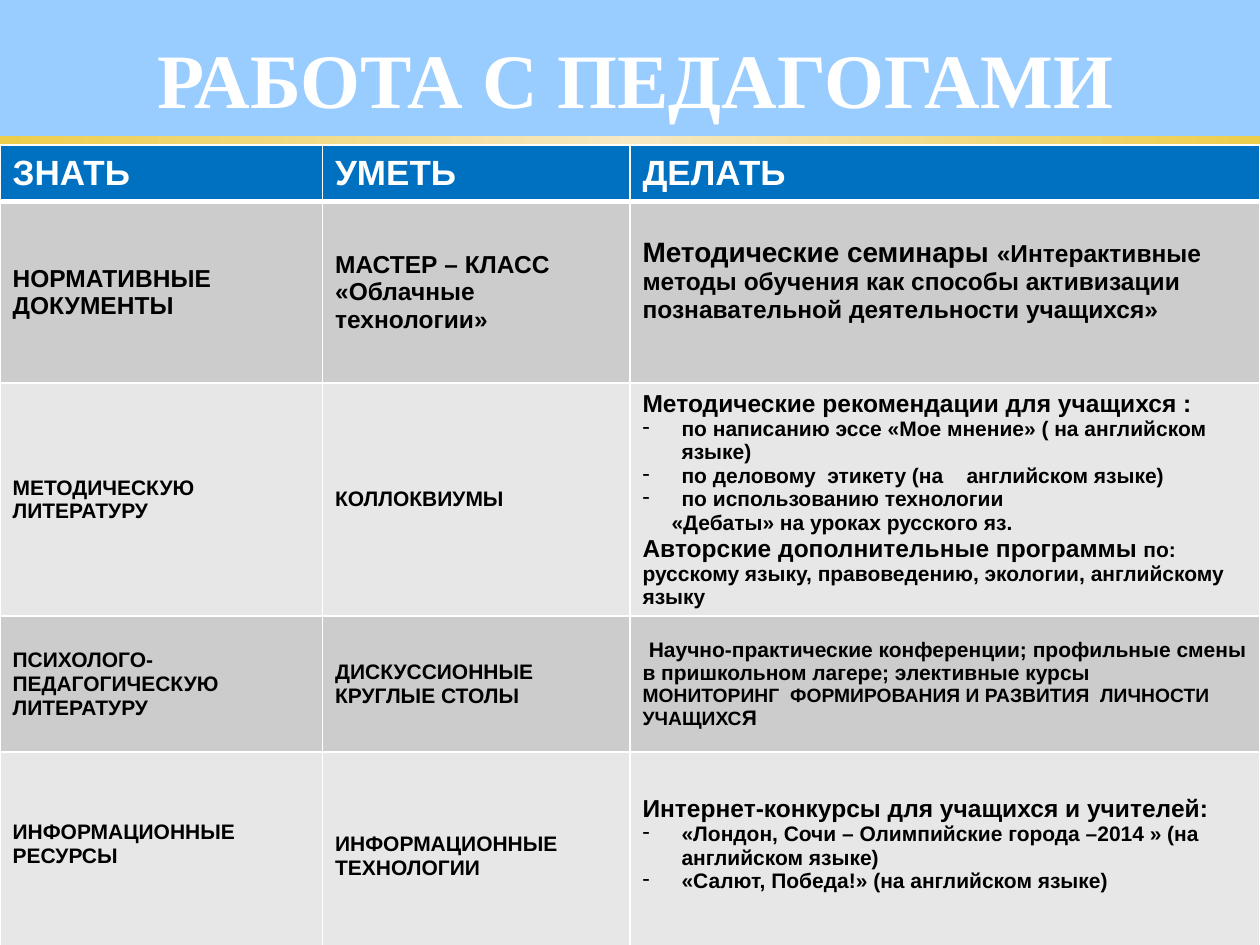
import copy

import pptx
import pptx.dml.color
import pptx.enum.shapes
import pptx.enum.text
import pptx.oxml
import pptx.oxml.ns
import pptx.util

Inches = pptx.util.Inches
Pt = pptx.util.Pt

TABLE_TOP = 1.15
COLUMN_WIDTHS = [2.56, 2.44, 5]
ROW_HEIGHTS = [0.45, 1.44, 1.85, 1.08, 1.65]
ROW_FILLS = ["0070C0", "CCCCCC", "E7E7E7", "CCCCCC", "E7E7E7"]
HANGING = 0.31


def line(*runs, left=0, first=0, bullet=None):
    """One paragraph: (text, size) runs with its indents in inches."""
    return {"runs": runs, "left": left, "first": first, "bullet": bullet}


def dash(text):
    return line((text, 12), left=HANGING, first=-HANGING, bullet="-")


HEADER = [[line((text, 20))] for text in ("ЗНАТЬ", "УМЕТЬ", "ДЕЛАТЬ")]
BODY = [
    [
        [line(("НОРМАТИВНЫЕ ДОКУМЕНТЫ", 14))],
        [line(("МАСТЕР – КЛАСС «Облачные технологии»", 14))],
        [line(("Методические семинары ", 16),
              ("«Интерактивные методы обучения как способы активизации "
               "познавательной деятельности учащихся»", 14))],
    ],
    [
        [line(("МЕТОДИЧЕСКУЮ ЛИТЕРАТУРУ", 12))],
        [line(("КОЛЛОКВИУМЫ", 12))],
        [line(("Методические рекомендации для учащихся :", 14)),
         dash("по написанию эссе «Мое мнение» ( на английском языке)"),
         dash("по деловому  этикету (на    английском языке)"),
         dash("по использованию технологии"),
         line(("«Дебаты» на уроках русского яз.", 12), left=0.23),
         line(("Авторские дополнительные программы", 14),
              (" по: русскому языку, правоведению, экологии, английскому языку", 12))],
    ],
    [
        [line(("ПСИХОЛОГО-ПЕДАГОГИЧЕСКУЮ ЛИТЕРАТУРУ", 12))],
        [line(("ДИСКУССИОННЫЕ КРУГЛЫЕ СТОЛЫ", 12))],
        [line(("Научно-практические конференции; профильные смены "
               "в пришкольном лагере; элективные курсы", 12), first=0.05),
         line(("МОНИТОРИНГ  ФОРМИРОВАНИЯ И РАЗВИТИЯ  ЛИЧНОСТИ УЧАЩИХС", 11),
              ("Я", 12))],
    ],
    [
        [line(("ИНФОРМАЦИОННЫЕ", 12)), line(("РЕСУРСЫ", 12))],
        [line(("ИНФОРМАЦИОННЫЕ ТЕХНОЛОГИИ", 12))],
        [line(("Интернет-конкурсы для учащихся и учителей:", 14)),
         dash("«Лондон, Сочи – Олимпийские города –2014 » (на английском языке)"),
         dash("«Салют, Победа!» (на английском языке)")],
    ],
]
# Cells (row, column) whose text sits a little above the middle
RAISED_CELLS = {(1, 2), (4, 0), (4, 2)}


def color(value):
    return pptx.dml.color.RGBColor.from_string(value)


def style_font(font, name, size, value):
    font.name = name
    font.size = Pt(size)
    font.bold = True
    font.color.rgb = color(value)


def add_title(slide, text):
    box = slide.shapes.add_textbox(Inches(0.42), Inches(0.33), Inches(9.25), Inches(0.58))
    frame = box.text_frame
    frame.word_wrap = True
    frame.vertical_anchor = pptx.enum.text.MSO_ANCHOR.MIDDLE
    frame.text = text
    paragraph = frame.paragraphs[0]
    paragraph.alignment = pptx.enum.text.PP_ALIGN.CENTER
    style_font(paragraph.runs[0].font, "Times New Roman", 44, "FFFFFF")


def add_gold_band(slide):
    band = slide.shapes.add_shape(
        pptx.enum.shapes.MSO_SHAPE.RECTANGLE, 0, Inches(1.08), Inches(10), Inches(0.13))
    band.shadow.inherit = False
    band.line.fill.background()
    band.fill.gradient()
    band.fill.gradient_angle = 0
    stop_list = band.fill._fill._gradFill.gsLst
    stop_list.append(copy.deepcopy(stop_list[0]))
    stops = zip(band.fill.gradient_stops, (0, 0.5, 1), ("ECCE4C", "F6E9C4", "ECCE4C"))
    for stop, position, value in stops:
        stop.position = position
        stop.color.rgb = color(value)


def set_border(cell, side, points):
    border = pptx.oxml.parse_xml(
        f'<a:ln{side} {pptx.oxml.ns.nsdecls("a")} w="{Pt(points)}">'
        '<a:solidFill><a:srgbClr val="FFFFFF"/></a:solidFill>'
        f'</a:ln{side}>')
    cell._tc.get_or_add_tcPr().append(border)


def write_paragraph(paragraph, content, value):
    properties = paragraph._p.get_or_add_pPr()
    properties.set("marL", str(Inches(content["left"])))
    properties.set("indent", str(Inches(content["first"])))
    if content["bullet"]:
        properties.append(pptx.oxml.parse_xml(
            f'<a:buChar {pptx.oxml.ns.nsdecls("a")} char="{content["bullet"]}"/>'))
    for text, size in content["runs"]:
        run = paragraph.add_run()
        run.text = text
        style_font(run.font, "Arial", size, value)


def fill_cell(cell, paragraphs, fill, text_color, top_border, bottom_border, raised):
    for side, points in zip("LRTB", (1, 1, top_border, bottom_border)):
        set_border(cell, side, points)
    cell.fill.solid()
    cell.fill.fore_color.rgb = color(fill)
    cell.vertical_anchor = pptx.enum.text.MSO_ANCHOR.MIDDLE
    cell.margin_left = cell.margin_right = Inches(0.1)
    cell.margin_top = Inches(0.05)
    cell.margin_bottom = Inches(0.24 if raised else 0.05)
    frame = cell.text_frame
    for index, content in enumerate(paragraphs):
        paragraph = frame.add_paragraph() if index else frame.paragraphs[0]
        write_paragraph(paragraph, content, text_color)


def add_plan_table(slide):
    rows = [HEADER] + BODY
    table = slide.shapes.add_table(
        len(rows), len(COLUMN_WIDTHS), 0, Inches(TABLE_TOP),
        Inches(sum(COLUMN_WIDTHS)), Inches(sum(ROW_HEIGHTS))).table
    for column, width in zip(table.columns, COLUMN_WIDTHS):
        column.width = Inches(width)
    for row_index, cells in enumerate(rows):
        table.rows[row_index].height = Inches(ROW_HEIGHTS[row_index])
        for column_index, paragraphs in enumerate(cells):
            fill_cell(
                table.cell(row_index, column_index), paragraphs, ROW_FILLS[row_index],
                text_color="000000" if row_index else "FFFFFF",
                top_border=3 if row_index == 1 else 1,
                bottom_border=3 if row_index == 0 else 1,
                raised=(row_index, column_index) in RAISED_CELLS)


def main():
    presentation = pptx.Presentation()
    presentation.slide_width = Inches(10)
    presentation.slide_height = Inches(7.5)
    slide = presentation.slides.add_slide(presentation.slide_layouts[6])
    slide.background.fill.solid()
    slide.background.fill.fore_color.rgb = color("99CCFF")
    add_gold_band(slide)
    add_plan_table(slide)
    add_title(slide, "РАБОТА С ПЕДАГОГАМИ")
    presentation.save("out.pptx")


if __name__ == "__main__":
    main()
